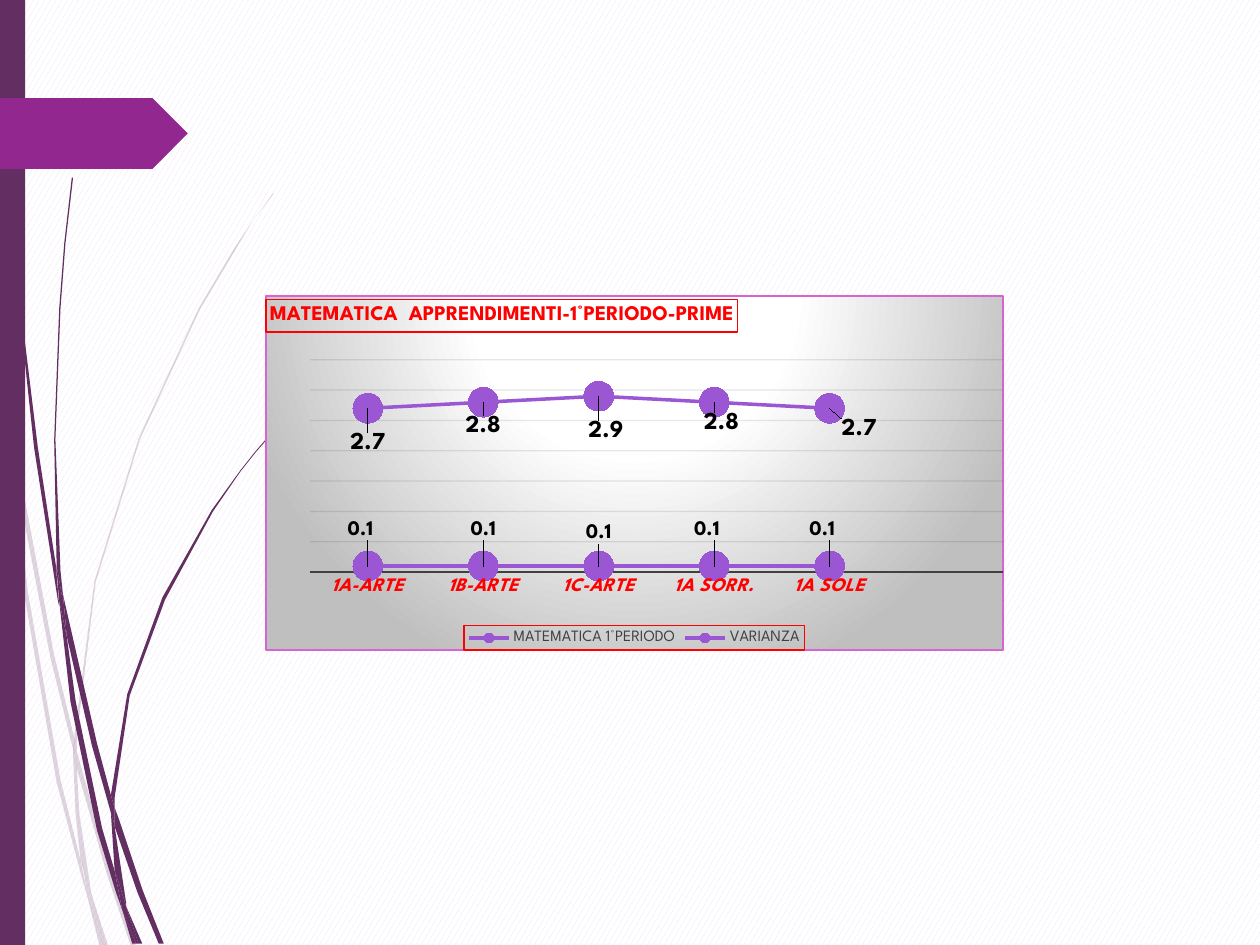
import pptx
import pptx.chart.data
import pptx.dml.color
import pptx.enum.chart
import pptx.enum.dml
import pptx.enum.shapes
import pptx.oxml
import pptx.oxml.ns
import pptx.util

Inches, Pt = pptx.util.Inches, pptx.util.Pt
FONT = "League Spartan"
PLUM, PURPLE, RED = "632E62", "9B57D3", "FF0000"
LAYOUT = "<c:layout><c:manualLayout>{}</c:manualLayout></c:layout>"


def rgb(color):
    return pptx.dml.color.RGBColor.from_string(color)


def insert_after(element, xml):
    """Parse chart XML, declare its namespaces and put it behind element."""
    head, rest = xml.split(">", 1)
    names = pptx.oxml.ns.nsdecls("c", "a")
    element.addnext(pptx.oxml.parse_xml(f"{head} {names}>{rest}"))


prs = pptx.Presentation()
prs.slide_width, prs.slide_height = Inches(10), Inches(7.5)
slide = prs.slides.add_slide(prs.slide_layouts[6])
fill = slide.background.fill
fill.patterned()
fill.pattern = pptx.enum.dml.MSO_PATTERN.LARGE_CONFETTI
fill.fore_color.rgb, fill.back_color.rgb = rgb("EBDDF6"), rgb("FFFFFF")

# Outlines of the grass blades, in hundredths of an inch
pale_blades = [
    [(8, 350), (6, 322), (0, 282), (0, 299), (7, 344)],
    [(40, 522), (59, 599), (59, 586), (43, 520), (10, 345), (12, 376)],
    [(64, 607), (61, 596), (61, 610), (85, 694), (104, 751), (108, 751), (88, 692)],
    [(83, 751), (86, 751), (73, 711)],
    [(64, 683), (48, 619), (22, 469), (12, 376), (8, 350), (19, 470), (45, 621),
     (64, 693), (70, 714), (69, 707)],
    [(58, 599), (60, 646), (64, 683), (67, 692), (73, 711), (72, 706), (63, 646),
     (61, 610), (61, 608)],
    [(61, 584), (76, 462), (111, 349), (159, 245), (187, 198), (201, 175), (217, 154),
     (217, 153), (201, 175), (186, 197), (158, 244), (110, 348), (75, 461), (59, 584),
     (59, 586), (61, 596)],
    [(70, 714), (79, 751), (82, 751)],
    [(61, 608), (61, 610), (61, 596), (59, 586), (58, 599)],
    [(67, 692), (65, 683), (69, 707), (70, 714), (82, 751), (83, 751), (73, 711)],
]
dark_blades = [
    [(5, 110), (14, 233), (27, 355), (46, 477), (47, 481), (45, 457), (45, 453),
     (30, 355), (15, 232), (6, 109), (4, 48), (3, 0), (2, 0), (3, 48)],
    [(73, 592), (88, 645), (88, 633), (88, 631), (77, 590), (50, 472), (53, 505)],
    [(94, 649), (91, 641), (91, 656), (109, 708), (126, 749), (130, 749), (113, 706)],
    [(91, 691), (81, 657), (60, 556), (53, 505), (47, 477), (56, 557), (77, 659),
     (92, 708), (97, 722), (96, 717)],
    [(50, 472), (48, 453), (44, 349), (48, 245), (52, 193), (58, 141), (57, 141),
     (51, 193), (47, 245), (43, 349), (45, 449), (49, 472)],
    [(110, 749), (113, 749), (100, 719)],
    [(47, 477), (53, 505), (50, 472), (49, 472), (45, 449), (45, 453)],
    [(91, 633), (103, 552), (131, 476), (169, 406), (191, 374), (203, 359), (216, 344),
     (215, 344), (203, 358), (191, 373), (168, 405), (129, 474), (101, 551), (88, 631),
     (91, 641)],
    [(97, 722), (105, 749), (108, 749)],
    [(88, 645), (91, 691), (96, 706), (100, 719), (100, 716), (91, 656), (90, 651)],
    [(88, 645), (90, 651), (91, 656), (91, 641), (88, 631), (88, 633)],
    [(96, 706), (91, 691), (96, 717), (97, 722), (108, 749), (110, 749), (100, 719)],
]
for blades, alpha in ((pale_blades, 20), (dark_blades, 100)):
    for points in blades:
        builder = slide.shapes.build_freeform(*points[0], scale=Inches(0.01))
        builder.add_line_segments(points[1:], close=True)
        s = builder.convert_to_shape()
        s.shadow.inherit = False
        s.fill.solid()
        s.fill.fore_color.rgb = rgb(PLUM)
        s.line.fill.background()
        if alpha < 100:
            color = s._element.spPr.xpath("./a:solidFill/a:srgbClr")[0]
            color.append(pptx.oxml.parse_xml(
                f'<a:alpha {pptx.oxml.ns.nsdecls("a")} val="{alpha * 1000}"/>'))

# Side bar and page tag
SHAPE = pptx.enum.shapes.MSO_SHAPE
for kind, left, top, width, height, color in (
    (SHAPE.RECTANGLE, 0, 0, 0.2, 7.5, PLUM),
    (SHAPE.PENTAGON, 0, 0.78, 1.49, 0.56, "92278F"),
):
    s = slide.shapes.add_shape(kind, Inches(left), Inches(top), Inches(width), Inches(height))
    s.shadow.inherit = False
    s.fill.solid()
    s.fill.fore_color.rgb = rgb(color)
    s.line.fill.background()

# Chart
data = pptx.chart.data.CategoryChartData()
data.categories = ["1A-ARTE", "1B-ARTE", "1C-ARTE", "1A SORR.", "1A SOLE", ""]
data.add_series("MATEMATICA 1°PERIODO", [2.7, 2.8, 2.9, 2.8, 2.7, None])
data.add_series("VARIANZA", [0.1] * 5 + [None])
chart = slide.shapes.add_chart(
    pptx.enum.chart.XL_CHART_TYPE.LINE_MARKERS,
    Inches(2.1), Inches(2.34), Inches(5.87), Inches(2.83), data).chart

chart.has_title = chart.has_legend = True
title, legend = chart.chart_title, chart.legend
p = title.text_frame.paragraphs[0]
r = p.add_run()
r.text = "MATEMATICA  APPRENDIMENTI-1°PERIODO-PRIME"
title.format.line.color.rgb = rgb(RED)
title.format.line.width = Pt(0.75)
legend.position = pptx.enum.chart.XL_LEGEND_POSITION.BOTTOM
legend.include_in_layout = False

cat_axis, val_axis = chart.category_axis, chart.value_axis
cat_axis.major_tick_mark = pptx.enum.chart.XL_TICK_MARK.NONE
cat_axis.format.line.color.rgb = rgb("404040")
cat_axis.format.line.width = Pt(1.5)
val_axis.visible = False
val_axis.minimum_scale, val_axis.maximum_scale, val_axis.major_unit = 0, 3.5, 0.5
grid = val_axis.major_gridlines.format.line
grid.color.rgb = rgb("0D0D0D")
grid.width = Pt(0.75)
grid_color = val_axis._element.xpath("./c:majorGridlines//a:srgbClr")[0]
grid_color.append(pptx.oxml.parse_xml(
    f'<a:alpha {pptx.oxml.ns.nsdecls("a")} val="10000"/>'))

fonts = [
    (chart.font, dict(size=Pt(10), color="000000")),
    (r.font, dict(size=Pt(12), color=RED, bold=True)),
    (cat_axis.tick_labels.font, dict(size=Pt(11), color=RED, bold=True, italic=True)),
    (legend.font, dict(size=Pt(9), color="404040", bold=False)),
]

# Line width, label size, label fill and label shifts as parts of the chart size
series_styles = [
    (2, 14, "FFC000", [(0, 0.1), (0, 0.07), (0.01, 0.1), (0.01, 0.06), (0.04, 0.06)]),
    (2.5, 12, "E6DDF5", [(-0.01, -0.1), (0, -0.1), (0, -0.09), (-0.01, -0.1), (-0.01, -0.1)]),
]
chart.plots[0].vary_by_categories = False
for series, (width, size, label_fill, shifts) in zip(chart.plots[0].series, series_styles):
    series.smooth = False
    series.format.line.color.rgb = rgb(PURPLE)
    series.format.line.width = Pt(width)
    marker = series.marker
    marker.style = pptx.enum.chart.XL_MARKER_STYLE.CIRCLE
    marker.size = 17
    marker.format.fill.solid()
    marker.format.fill.fore_color.rgb = rgb(PURPLE)
    marker.format.line.color.rgb = rgb(PURPLE)
    labels = series.data_labels
    labels.show_value = True
    labels.position = pptx.enum.chart.XL_LABEL_POSITION.CENTER
    label_font = dict(size=Pt(size), color="000000", bold=True)
    fonts.append((labels.font, label_font))
    for i, (dx, dy) in enumerate(shifts):
        label = series.points[i].data_label
        label.position = pptx.enum.chart.XL_LABEL_POSITION.CENTER
        fonts.append((label.font, label_font))
        idx = labels._element.xpath(f"./c:dLbl/c:idx[@val='{i}']")[0]
        insert_after(idx, f'<c:spPr><a:solidFill><a:srgbClr val="{label_fill}"/>'
                          "</a:solidFill></c:spPr>")
        insert_after(idx, LAYOUT.format(f'<c:x val="{dx}"/><c:y val="{dy}"/>'))

for font, values in fonts:
    for name, value in dict(values, name=FONT).items():
        if name == "color":
            font.color.rgb = rgb(value)
        else:
            setattr(font, name, value)

# Places of title and plot, then the frames of legend and chart
space = chart._chartSpace
for old in space.xpath("./c:chart/c:title/c:layout | ./c:chart/c:plotArea/c:layout"):
    old.getparent().remove(old)
edge = '<c:xMode val="edge"/><c:yMode val="edge"/>'
insert_after(space.xpath("./c:chart/c:title/c:tx")[0],
             LAYOUT.format(edge + '<c:x val="0"/><c:y val="0.01"/>'))
plot_area = space.xpath("./c:chart/c:plotArea")[0]
insert_after(plot_area[0], LAYOUT.format(
    '<c:layoutTarget val="inner"/>' + edge
    + '<c:x val="0.06"/><c:y val="0.18"/><c:w val="0.94"/><c:h val="0.6"/>'))
plot_area.insert(0, plot_area[1])
line = '<a:ln w="{}"><a:solidFill><a:srgbClr val="{}"/></a:solidFill></a:ln>'
insert_after(space.xpath("./c:chart/c:legend/c:overlay")[0],
             f"<c:spPr>{line.format(Pt(0.75), RED)}</c:spPr>")
stops = "".join(f'<a:gs pos="{pos}000"><a:srgbClr val="{color}"/></a:gs>'
                for pos, color in ((0, "FFFFFF"), (39, "FFFFFF"), (100, "BFBFBF")))
insert_after(space.xpath("./c:chart")[0],
             f'<c:spPr><a:gradFill><a:gsLst>{stops}</a:gsLst><a:path path="circle">'
             '<a:fillToRect l="50000" t="-80000" r="50000" b="180000"/></a:path>'
             f'</a:gradFill>{line.format(Pt(1.5), "D665D3")}</c:spPr>')

prs.save("out.pptx")
